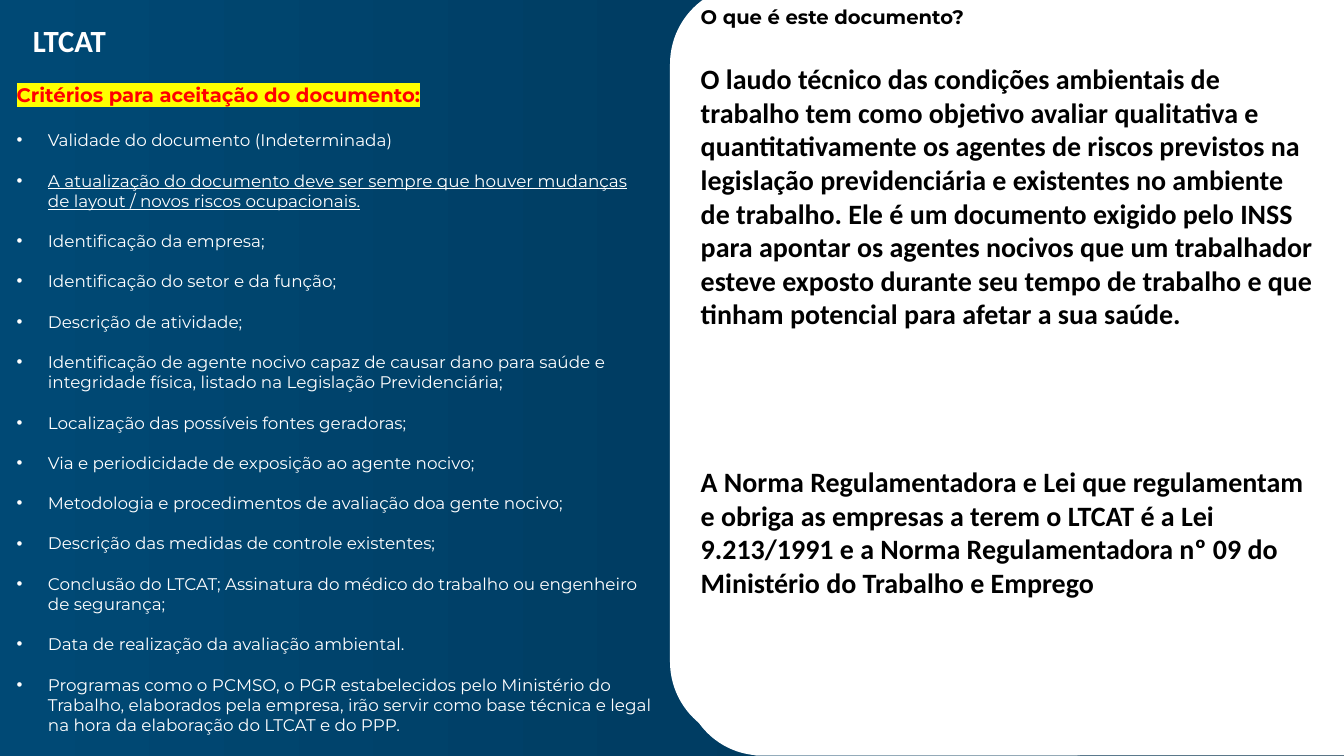
from copy import deepcopy

from lxml.etree import SubElement
from pptx import Presentation
from pptx.dml.color import RGBColor
from pptx.enum.shapes import MSO_SHAPE
from pptx.enum.text import MSO_ANCHOR, MSO_AUTO_SIZE, PP_ALIGN
from pptx.oxml.ns import qn
from pptx.util import Inches, Pt

COLORS = {
    "navy": "002B45", "blue": "003D63", "light_blue": "004975",
    "white": "FFFFFF", "black": "000000", "red": "FF0000", "yellow": "FFFF00",
}

HEADING = "Critérios para aceitação do documento:"
UPDATE_RULE = ("A atualização do documento deve ser sempre que houver mudanças "
               "de layout / novos riscos ocupacionais.")
CRITERIA = [
    "Validade do documento (Indeterminada)",
    UPDATE_RULE,
    "Identificação da empresa;",
    "Identificação do setor e da função;",
    "Descrição de atividade;",
    "Identificação de agente nocivo capaz de causar dano para saúde e "
    "integridade física, listado na Legislação Previdenciária;",
    "Localização das possíveis fontes geradoras;",
    "Via e periodicidade de exposição ao agente nocivo;",
    "Metodologia e procedimentos de avaliação doa gente nocivo;",
    "Descrição das medidas de controle existentes;",
    "Conclusão do LTCAT; Assinatura do médico do trabalho ou engenheiro "
    "de segurança;",
    "Data de realização da avaliação ambiental.",
    "Programas como o PCMSO, o PGR estabelecidos pelo Ministério do Trabalho, "
    "elaborados pela empresa, irão servir como base técnica e legal na hora da "
    "elaboração do LTCAT e do PPP.",
]
QUESTION = "O que é este documento?"
DEFINITION = (
    "O laudo técnico das condições ambientais de trabalho tem como objetivo "
    "avaliar qualitativa e quantitativamente os agentes de riscos previstos na "
    "legislação previdenciária e existentes no ambiente de trabalho. Ele é um "
    "documento exigido pelo INSS para apontar os agentes nocivos que um "
    "trabalhador esteve exposto durante seu tempo de trabalho e que tinham "
    "potencial para afetar a sua saúde.")
LEGAL_BASIS = (
    "A Norma Regulamentadora e Lei que regulamentam e obriga as empresas a "
    "terem o LTCAT é a Lei 9.213/1991 e a Norma Regulamentadora nº 09 do "
    "Ministério do Trabalho e Emprego")


def rgb(name):
    return RGBColor.from_string(COLORS[name])


def add_block(s, kind, left, top, width, height):
    sp = s.shapes.add_shape(kind, Inches(left), Inches(top),
                            Inches(width), Inches(height))
    sp.shadow.inherit = False
    sp.line.fill.background()
    sp.fill.solid()
    sp.fill.fore_color.rgb = rgb("white")
    return sp


def fill_gradient(sp, names, angle):
    sp.fill.gradient()
    sp.fill.gradient_angle = angle
    first = sp.fill._fill._gradFill.gsLst[0]
    first.addnext(deepcopy(first))
    stops = sp.fill.gradient_stops
    for i, (stop, name) in enumerate(zip(stops, names)):
        stop.position = i / (len(names) - 1)
        stop.color.rgb = rgb(name)


def place(sp, left, top, width, height):
    sp.left, sp.top = Inches(left), Inches(top)
    sp.width, sp.height = Inches(width), Inches(height)
    tf = sp.text_frame
    tf.word_wrap = True
    tf.auto_size = MSO_AUTO_SIZE.NONE
    tf.vertical_anchor = MSO_ANCHOR.TOP
    return tf


def write(p, text, size, font, color, bold=False, before=0, bullet=False):
    p.text = text
    p.alignment = PP_ALIGN.LEFT
    p.space_before = Pt(before)
    pPr = p._p.get_or_add_pPr()
    indent = Inches(0.62) if bullet else 0
    pPr.set("marL", str(indent))
    pPr.set("indent", str(-indent))
    if bullet:
        SubElement(pPr, qn("a:buFont"), typeface="Arial")
        SubElement(pPr, qn("a:buChar"), char="•")
    else:
        SubElement(pPr, qn("a:buNone"))
    r = p.runs[0]
    r.font.size, r.font.name, r.font.bold = Pt(size), font, bold
    r.font.color.rgb = rgb(color)
    return r


def highlight(r, name):
    mark = r._r.makeelement(qn("a:highlight"), {})
    SubElement(mark, qn("a:srgbClr"), val=COLORS[name])
    r._r.get_or_add_rPr().find(qn("a:solidFill")).addnext(mark)


def main():
    prs = Presentation()
    prs.slide_width, prs.slide_height = Inches(26.66), Inches(15)
    s = prs.slides.add_slide(prs.slide_layouts[3])
    title, criteria, about = s.placeholders

    # Blue background and white panel with rounded left corners
    background = add_block(s, MSO_SHAPE.RECTANGLE, 0, -0.29, 26.66, 15.29)
    fill_gradient(background, ["navy", "blue", "light_blue"], 180)
    panels = [
        add_block(s, MSO_SHAPE.RECTANGLE, 14.97, -0.01, 11.69, 15),
        add_block(s, MSO_SHAPE.ROUNDED_RECTANGLE, 13.58, -0.01, 9.21, 15),
        add_block(s, MSO_SHAPE.RECTANGLE, 14.71, -0.3, 11.95, 15),
        add_block(s, MSO_SHAPE.ROUNDED_RECTANGLE, 13.29, -0.3, 9.42, 15),
    ]
    for sp in reversed([background] + panels):
        title._element.getparent().insert(2, sp._element)

    # Title
    tf = place(title, 0.55, 0.39, 6.04, 0.84)
    write(tf.paragraphs[0], "LTCAT", 44, "Calibri", "white", bold=True)

    # Explanation on the right
    tf = place(about, 13.8, 0.04, 12.46, 12.02)
    write(tf.paragraphs[0], QUESTION, 28, "Montserrat", "black", bold=True)
    for text, before in ((DEFINITION, 48), (LEGAL_BASIS, 192)):
        write(tf.add_paragraph(), text, 40, "Calibri", "black",
              bold=True, before=before)

    # Acceptance criteria on the left
    tf = place(criteria, 0.23, 1.59, 12.82, 13.14)
    r = write(tf.paragraphs[0], HEADING, 28, "Montserrat", "red", bold=True)
    highlight(r, "yellow")
    for i, text in enumerate(CRITERIA):
        r = write(tf.add_paragraph(), text, 24, "Montserrat", "white",
                  before=28.8 if i else 34, bullet=True)
        r.font.underline = text == UPDATE_RULE

    prs.save("out.pptx")


if __name__ == "__main__":
    main()
